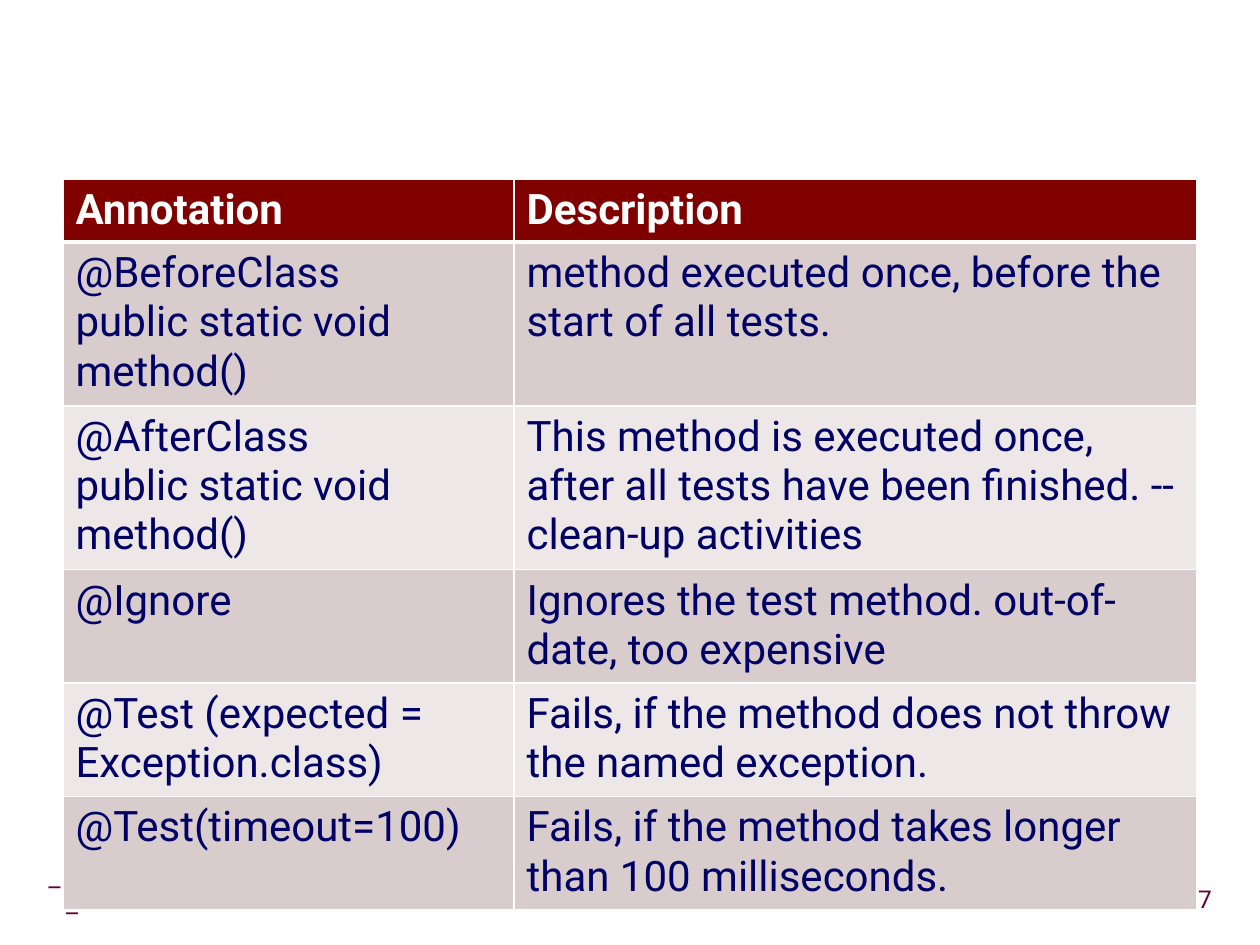
"""Build a slide with a table of test annotations."""
from typing import NamedTuple

from lxml import etree
from pptx import Presentation
from pptx import util as u
from pptx.dml import color
from pptx.enum import text
from pptx.oxml import ns

FONT = "Roboto"
WHITE, HEAD, NAVY, PLUM = "FFFFFF", "800000", "000066", "660033"
BANDS = ("D8CCCC", "EDE7E7")
WIDTHS = (3.58, 5.42)


class Row(NamedTuple):
    name: str
    note: str
    high: float


class Label(NamedTuple):
    words: str
    left: float
    top: float


ROWS = (
    Row("Annotation", "Description", 0.49),
    Row("@BeforeClass \vpublic static void method()",
        "method executed once, before the start of all tests.", 1.3),
    Row("@AfterClass \vpublic static void method()",
        "This method is executed once, after all tests have been finished. "
        "--clean-up activities", 1.3),
    Row("@Ignore", "Ignores the test method. out-of-date, too expensive", 0.9),
    Row("@Test (expected = Exception.class)",
        "Fails, if the method does not throw the named exception.", 0.9),
    Row("@Test(timeout=100)",
        "Fails, if the method takes longer than 100 milliseconds.", 0.9),
)
LABELS = (
    Label("7", 9.46, 6.99),
    Label("–", 0.32, 6.9),
    Label("–", 0.46, 7.1),
)


def paint(hue: str) -> color.RGBColor:
    return color.RGBColor.from_string(hue)


def write(frame, words: str, *, size: float, hue: str, bold: bool = False,
          align=text.PP_ALIGN.LEFT, space: float = 1.0) -> None:
    para = frame.paragraphs[0]
    para.text = words
    para.alignment = align
    para.line_spacing = space
    for run in para.runs:
        font = run.font
        font.name, font.size, font.bold = FONT, u.Pt(size), bold
        font.color.rgb = paint(hue)


def edge(cell, top: float, base: float) -> None:
    props = cell._tc.get_or_add_tcPr()
    sides = {"lnL": 1, "lnR": 1, "lnT": top, "lnB": base}
    for spot, (side, width) in enumerate(sides.items()):
        line = etree.Element(ns.qn(f"a:{side}"), w=str(u.Pt(width)))
        fill = etree.SubElement(line, ns.qn("a:solidFill"))
        etree.SubElement(fill, ns.qn("a:srgbClr"), val=WHITE)
        props.insert(spot, line)


def draw_label(slide, label: Label) -> None:
    box = slide.shapes.add_textbox(u.Inches(label.left), u.Inches(label.top),
                                   u.Inches(0.2), u.Inches(0.31))
    frame = box.text_frame
    frame.word_wrap = False
    frame.vertical_anchor = text.MSO_ANCHOR.MIDDLE
    frame.margin_left = frame.margin_right = u.Inches(0.05)
    frame.margin_top = frame.margin_bottom = u.Inches(0.05)
    write(frame, label.words, size=14, hue=PLUM,
          align=text.PP_ALIGN.CENTER, space=0.9)


def draw_table(slide, rows: tuple[Row, ...]) -> None:
    high = sum(row.high for row in rows)
    table = slide.shapes.add_table(
        len(rows), len(WIDTHS), u.Inches(0.5), u.Inches(1.42),
        u.Inches(sum(WIDTHS)), u.Inches(high)).table
    for col, width in zip(table.columns, WIDTHS):
        col.width = u.Inches(width)
    for i, row in enumerate(rows):
        table.rows[i].height = u.Inches(row.high)
        first = i == 0
        for j, words in enumerate((row.name, row.note)):
            cell = table.cell(i, j)
            cell.fill.solid()
            cell.fill.fore_color.rgb = paint(HEAD if first else BANDS[(i - 1) % 2])
            edge(cell, top=3 if i == 1 else 1, base=3 if first else 1)
            write(cell.text_frame, words, size=24,
                  hue=WHITE if first else NAVY, bold=first)


def main() -> None:
    deck = Presentation()
    deck.slide_width, deck.slide_height = u.Inches(10), u.Inches(7.5)
    slide = deck.slides.add_slide(deck.slide_layouts[6])
    for label in LABELS:
        draw_label(slide, label)
    draw_table(slide, ROWS)
    deck.save("out.pptx")


if __name__ == "__main__":
    main()
